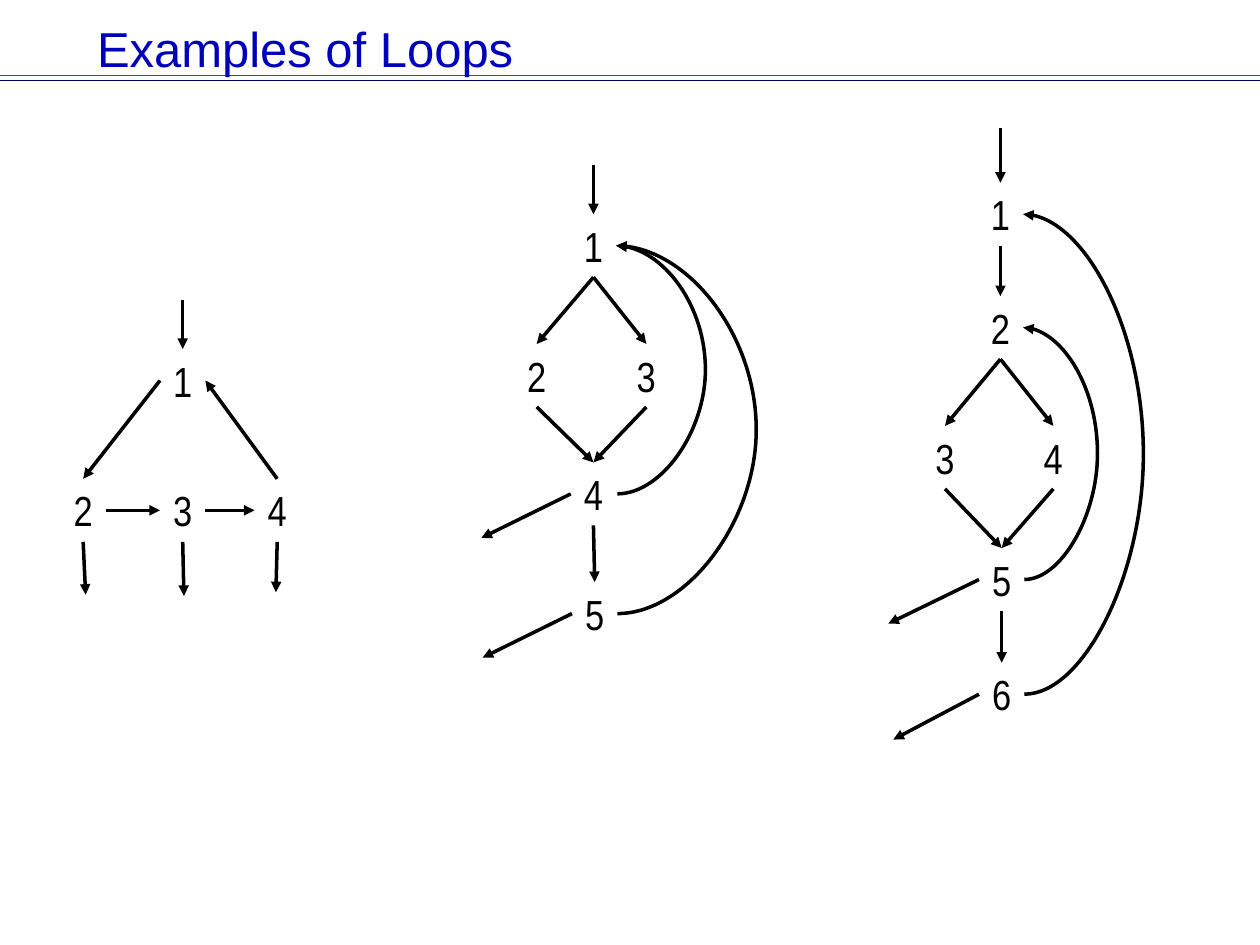
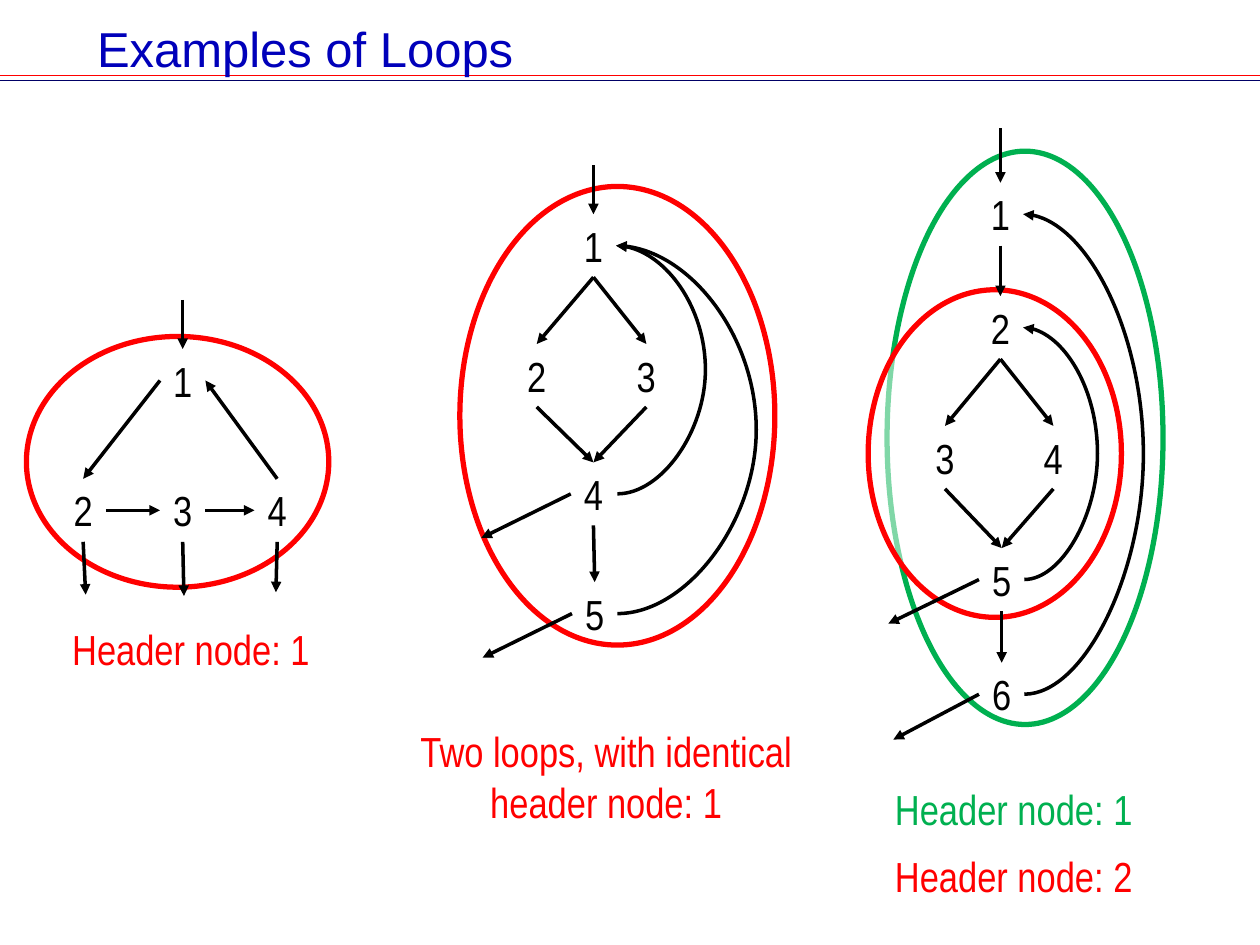
"""Build two slides of control-flow loops, first plain and then with the loops marked."""
import pptx
import pptx.dml.color
import pptx.enum.shapes
import pptx.enum.text
import pptx.oxml
import pptx.oxml.ns
import pptx.util
from lxml import etree

Inches, Pt = pptx.util.Inches, pptx.util.Pt
RGBColor = pptx.dml.color.RGBColor
qn = pptx.oxml.ns.qn
CONNECTOR = pptx.enum.shapes.MSO_CONNECTOR

BLACK = RGBColor(0x00, 0x00, 0x00)
WHITE = RGBColor(0xFF, 0xFF, 0xFF)
RED = RGBColor(0xFF, 0x00, 0x00)
GREEN = RGBColor(0x00, 0xB0, 0x50)
NAVY = RGBColor(0x00, 0x00, 0x66)
TITLE_BLUE = RGBColor(0x00, 0x00, 0xBA)

TOP, LEFT, BOTTOM, RIGHT = range(4)
NODE_WIDTH, NODE_HEIGHT = 0.36, 0.5
CURVE_SPAN = 0.01

TITLE = "Examples of Loops"
RULES = [(0.6, RED), (0.64, NAVY)]

# nodes: centre x and top; exits: side and reach; back_edges: x of the bend
LOOPS = [
    {
        "nodes": {"1": (4.71, 1.7), "2": (4.26, 2.73), "3": (5.13, 2.73),
                  "4": (4.71, 3.67), "5": (4.72, 4.62)},
        "entry_length": 0.39,
        "edges": [("1", BOTTOM, "2", TOP), ("1", BOTTOM, "3", TOP),
                  ("2", BOTTOM, "4", TOP), ("3", BOTTOM, "4", TOP),
                  ("4", BOTTOM, "5", TOP)],
        "exits": [("4", LEFT, -0.71, 0.35), ("5", LEFT, -0.71, 0.35)],
        "back_edges": [("4", "1", 5.61), ("5", "1", 6.02)],
        "outlines": [(3.65, 1.48, 2.5, 3.64, RED)],
        "captions": [("Two loops, with identical header node: 1", RED,
                      3.22, 5.71, 3.18, 0.91)],
    },
    {
        "nodes": {"1": (7.94, 1.45), "2": (7.94, 2.35), "3": (7.5, 3.38),
                  "4": (8.36, 3.38), "5": (7.95, 4.35), "6": (7.95, 5.26)},
        "entry_length": 0.43,
        "edges": [("1", BOTTOM, "2", TOP), ("2", BOTTOM, "3", TOP),
                  ("2", BOTTOM, "4", TOP), ("3", BOTTOM, "5", TOP),
                  ("4", BOTTOM, "5", TOP), ("5", BOTTOM, "6", TOP)],
        "exits": [("5", LEFT, -0.72, 0.35), ("6", LEFT, -0.68, 0.36)],
        "back_edges": [("5", "2", 8.72), ("6", "1", 9.09)],
        "outlines": [(7.04, 1.2, 2.19, 4.55, GREEN), (6.89, 2.3, 2.01, 2.6, RED)],
        "captions": [("Header node: 1", GREEN, 6.99, 6.17, 2.11, 0.5),
                     ("Header node: 2", RED, 6.99, 6.7, 2.11, 0.5)],
    },
    {
        "nodes": {"1": (1.45, 2.77), "2": (0.66, 3.8), "3": (1.45, 3.8),
                  "4": (2.2, 3.8)},
        "entry_length": 0.39,
        "edges": [("1", LEFT, "2", TOP), ("2", RIGHT, "3", LEFT),
                  ("3", RIGHT, "4", LEFT), ("4", TOP, "1", RIGHT)],
        "exits": [("2", BOTTOM, 0.02, 0.42), ("3", BOTTOM, 0.01, 0.43),
                  ("4", BOTTOM, -0.01, 0.4)],
        "back_edges": [],
        "outlines": [(0.21, 2.67, 2.4, 1.99, RED)],
        "captions": [("Header node: 1", RED, 0.46, 4.9, 2.11, 0.5)],
    },
]


def side_point(node, side):
    """Return the middle of one side of a node."""
    centre, top = node
    dx, dy = {TOP: (0, 0), LEFT: (-NODE_WIDTH / 2, NODE_HEIGHT / 2),
              BOTTOM: (0, NODE_HEIGHT),
              RIGHT: (NODE_WIDTH / 2, NODE_HEIGHT / 2)}[side]
    return centre + dx, top + dy


def add_line(shapes, start, end, colour, width, kind=CONNECTOR.STRAIGHT):
    """Add a connector without a shadow."""
    line = shapes.add_connector(kind, *map(Inches, (*start, *end)))
    line.line.color.rgb = colour
    line.line.width = Pt(width)
    etree.SubElement(line._element.spPr, qn("a:effectLst"))
    return line


def add_arrow(shapes, start, end, kind=CONNECTOR.STRAIGHT):
    """Add a black connector with an arrowhead at its end."""
    arrow = add_line(shapes, start, end, BLACK, 2, kind)
    outline = arrow._element.spPr.find(qn("a:ln"))
    etree.SubElement(outline, qn("a:tailEnd"), type="triangle")
    return arrow


def add_back_edge(shapes, source, target, bend):
    """Add a curved arrow that bulges right to the bend."""
    end_x, end_y = side_point(target, RIGHT)
    start_x, start_y = end_x + CURVE_SPAN, side_point(source, RIGHT)[1]
    curve = add_arrow(shapes, (start_x, start_y), (end_x, end_y), CONNECTOR.CURVE)
    adjustment = round((start_x - bend) / CURVE_SPAN * 100000) * -1
    adjustment = -abs(adjustment)
    guides = curve._element.spPr.find(qn("a:prstGeom")).find(qn("a:avLst"))
    etree.SubElement(guides, qn("a:gd"), name="adj1", fmla=f"val {adjustment}")


def add_label(shapes, text, colour, left, top, width, height):
    """Add centred text that wraps only in a box of several lines."""
    label = shapes.add_textbox(*map(Inches, (left, top, width, height)))
    frame = label.text_frame
    frame.word_wrap = height > NODE_HEIGHT
    frame.auto_size = pptx.enum.text.MSO_AUTO_SIZE.SHAPE_TO_FIT_TEXT
    frame.text = text
    paragraph = frame.paragraphs[0]
    paragraph.alignment = pptx.enum.text.PP_ALIGN.CENTER
    paragraph.font.name = "Arial Narrow"
    paragraph.font.size = Pt(24)
    paragraph.font.color.rgb = colour
    return label


def add_outline(shapes, left, top, width, height, colour):
    """Add a half-transparent ellipse around a loop."""
    ellipse = shapes.add_shape(pptx.enum.shapes.MSO_SHAPE.OVAL,
                               *map(Inches, (left, top, width, height)))
    ellipse.shadow.inherit = False
    ellipse.fill.solid()
    ellipse.fill.fore_color.rgb = WHITE
    white = ellipse._element.spPr.find(qn("a:solidFill")).find(qn("a:srgbClr"))
    etree.SubElement(white, qn("a:alpha"), val="50000")
    ellipse.line.color.rgb = colour
    ellipse.line.width = Pt(3)


def add_loop(shapes, loop, marked):
    """Draw one flow graph, with its outlines and captions if marked."""
    if marked:
        for outline in loop["outlines"]:
            add_outline(shapes, *outline)
    nodes = loop["nodes"]
    labels = {
        name: add_label(shapes, name, BLACK, centre - NODE_WIDTH / 2, top,
                        NODE_WIDTH, NODE_HEIGHT)
        for name, (centre, top) in nodes.items()
    }
    entry_x, entry_y = nodes["1"]
    entry = add_arrow(shapes, (entry_x, entry_y - loop["entry_length"]),
                      (entry_x, entry_y))
    entry.end_connect(labels["1"], TOP)
    for source, source_side, target, target_side in loop["edges"]:
        edge = add_arrow(shapes, side_point(nodes[source], source_side),
                         side_point(nodes[target], target_side))
        edge.begin_connect(labels[source], source_side)
        edge.end_connect(labels[target], target_side)
    for name, side, dx, dy in loop["exits"]:
        x, y = side_point(nodes[name], side)
        way_out = add_arrow(shapes, (x, y), (x + dx, y + dy))
        way_out.begin_connect(labels[name], side)
    for source, target, bend in loop["back_edges"]:
        add_back_edge(shapes, nodes[source], nodes[target], bend)
    if marked:
        for caption in loop["captions"]:
            add_label(shapes, *caption)


def add_title(slide):
    """Place and format the slide title."""
    title = slide.shapes.title
    title.left, title.top, title.width, title.height = map(
        Inches, (0.67, 0.1, 8.65, 1))
    title.text_frame.text = TITLE
    title.text_frame.vertical_anchor = pptx.enum.text.MSO_ANCHOR.TOP
    paragraph = title.text_frame.paragraphs[0]
    paragraph.alignment = pptx.enum.text.PP_ALIGN.LEFT
    paragraph.font.name = "Arial"
    paragraph.font.size = Pt(28)
    paragraph.font.color.rgb = TITLE_BLUE


def main():
    """Build and save the deck."""
    deck = pptx.Presentation()
    deck.slide_width, deck.slide_height = Inches(10), Inches(7.5)
    layout = deck.slide_layouts[5]
    plain, marked = (deck.slides.add_slide(layout) for _ in range(2))
    for y, colour in RULES:
        rule = add_line(plain.shapes, (0, y), (10, y), colour, 1)
        layout.shapes._spTree.append(rule._element)
    for slide in (plain, marked):
        add_title(slide)
    for loop in LOOPS:
        add_loop(plain.shapes, loop, False)
        add_loop(marked.shapes.add_group_shape().shapes, loop, True)
    deck.save("out.pptx")


if __name__ == "__main__":
    main()
